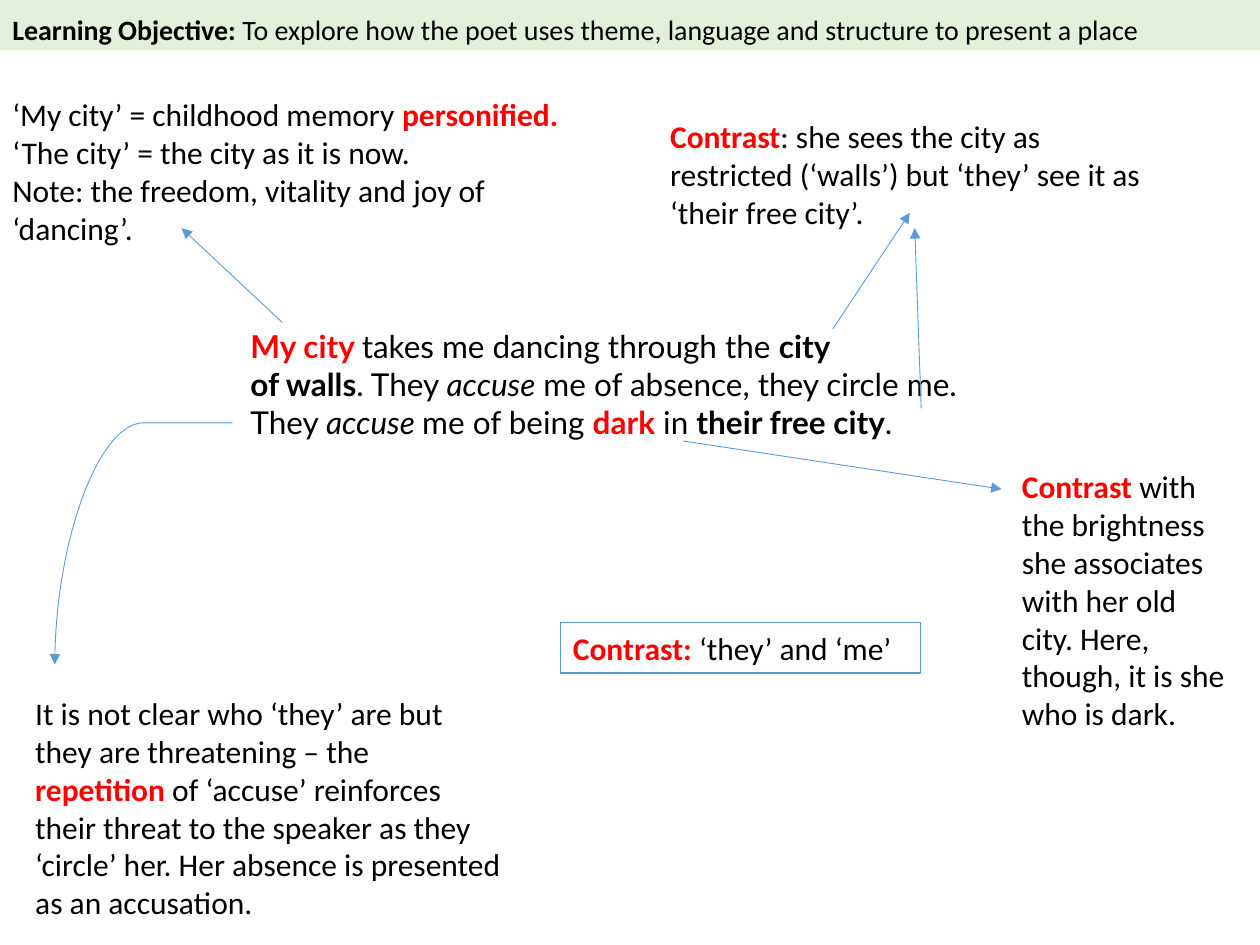
from lxml.etree import SubElement
from pptx import Presentation
from pptx.dml.color import RGBColor
from pptx.enum.shapes import MSO_CONNECTOR, MSO_SHAPE
from pptx.enum.text import MSO_ANCHOR, PP_ALIGN
from pptx.oxml.ns import qn
from pptx.util import Cm, Pt

COLORS = {"text": "000000", "key": "FF0000", "line": "5B9BD5", "banner": "E2F0D9"}

VERSE = [
    [("My city ", "key"), ("takes me dancing through the ", ""), ("city", "bold")],
    [("of walls", "bold"), (". They ", ""), ("accuse", "italic"),
     (" me of absence, they circle me.", "")],
    [("They ", ""), ("accuse ", "italic"), ("me of being ", ""), ("dark", "key"),
     (" in ", ""), ("their free city", "bold"), (".", "")],
]
OBJECTIVE = [[
    ("Learning Objective: ", "bold"),
    ("To explore how the poet uses theme, language and structure to present a place", ""),
]]
PRONOUNS = [[("Contrast: ", "key"), ("‘they’ and ‘me’", "")]]

NOTES = [
    ((13.26, 2.24, 10.16, 2.57), [[
        ("Contrast", "key"),
        (": she sees the city as restricted (‘walls’) but ‘they’ see it as "
         "‘their free city’.", "")]]),
    ((0, 1.8, 11.71, 3.33), [
        [("‘My city’ = childhood memory ", ""), ("personified.", "key")],
        [("‘The city’ = the city as it is now.", "")],
        [("Note: the freedom, vitality and joy of ‘dancing’.", "")]]),
    ((0.46, 13.87, 9.91, 4.88), [[
        ("It is not clear who ‘they’ are but they are threatening – the ", ""),
        ("repetition", "key"),
        (" of ‘accuse’ reinforces their threat to the speaker as they ‘circle’ her. "
         "Her absence is presented as an accusation.", "")]]),
    ((20.35, 9.3, 4.78, 5.64), [[
        ("Contrast", "key"),
        (" with the brightness she associates with her old city. Here, though, "
         "it is she who is dark.", "")]]),
]

ARROWS = [
    (16.79, 6.63, 18.34, 4.29),
    (18.57, 8.23, 18.44, 4.6),
    (5.69, 6.5, 3.66, 4.6),
    (13.77, 8.89, 20.19, 9.86),
]
CURVE = (0.46, 9.17, 5.33, 12.75)


def rgb(name):
    return RGBColor.from_string(COLORS[name])


def write(sp, paragraphs, font="Calibri", size=18, anchor=MSO_ANCHOR.TOP):
    tf = sp.text_frame
    tf.word_wrap = True
    tf.vertical_anchor = anchor
    for i, runs in enumerate(paragraphs):
        p = tf.add_paragraph() if i else tf.paragraphs[0]
        p.alignment = PP_ALIGN.LEFT
        for text, style in runs:
            r = p.add_run()
            r.text = text
            r.font.name = font
            r.font.size = Pt(size)
            r.font.bold = style in ("key", "bold")
            r.font.italic = style == "italic"
            r.font.color.rgb = rgb("key" if style == "key" else "text")


def add_text(s, box, paragraphs, **options):
    sp = s.shapes.add_textbox(*map(Cm, box))
    write(sp, paragraphs, **options)


def add_box(s, box):
    sp = s.shapes.add_shape(MSO_SHAPE.RECTANGLE, *map(Cm, box))
    sp.shadow.inherit = False
    return sp


def add_arrow(s, ends, kind=MSO_CONNECTOR.STRAIGHT):
    c = s.shapes.add_connector(kind, *map(Cm, ends))
    c.line.color.rgb = rgb("line")
    c.line.width = Pt(0.5)
    SubElement(c.line._get_or_add_ln(), qn("a:tailEnd"), type="triangle")
    SubElement(c._element.spPr, qn("a:effectLst"))
    return c


prs = Presentation()
prs.slide_width, prs.slide_height = Cm(25.4), Cm(19.05)
s = prs.slides.add_slide(prs.slide_layouts[6])

add_text(s, (4.8, 5.69, 16.1, 4.11), VERSE, font="Lato", anchor=MSO_ANCHOR.MIDDLE)

banner = add_box(s, (0, 0, 25.4, 1.02))
banner.fill.solid()
banner.fill.fore_color.rgb = rgb("banner")
banner.line.fill.background()
banner.text_frame.margin_top, banner.text_frame.margin_bottom = Cm(0.25), Cm(0.08)
write(banner, OBJECTIVE, size=16, anchor=MSO_ANCHOR.MIDDLE)

for box, paragraphs in NOTES:
    add_text(s, box, paragraphs)

for ends in ARROWS:
    add_arrow(s, ends)

curve = add_arrow(s, CURVE, MSO_CONNECTOR.CURVE)
spPr = curve._element.spPr
spPr.find(qn("a:xfrm")).set("rot", "5400000")
avLst = spPr.find(qn("a:prstGeom")).find(qn("a:avLst"))
SubElement(avLst, qn("a:gd"), name="adj1", fmla="val 0")

pronouns = add_box(s, (11.3, 12.55, 7.26, 1.02))
pronouns.fill.background()
pronouns.line.color.rgb = rgb("line")
pronouns.line.width = Pt(0.75)
write(pronouns, PRONOUNS, anchor=MSO_ANCHOR.MIDDLE)

prs.save("out.pptx")
